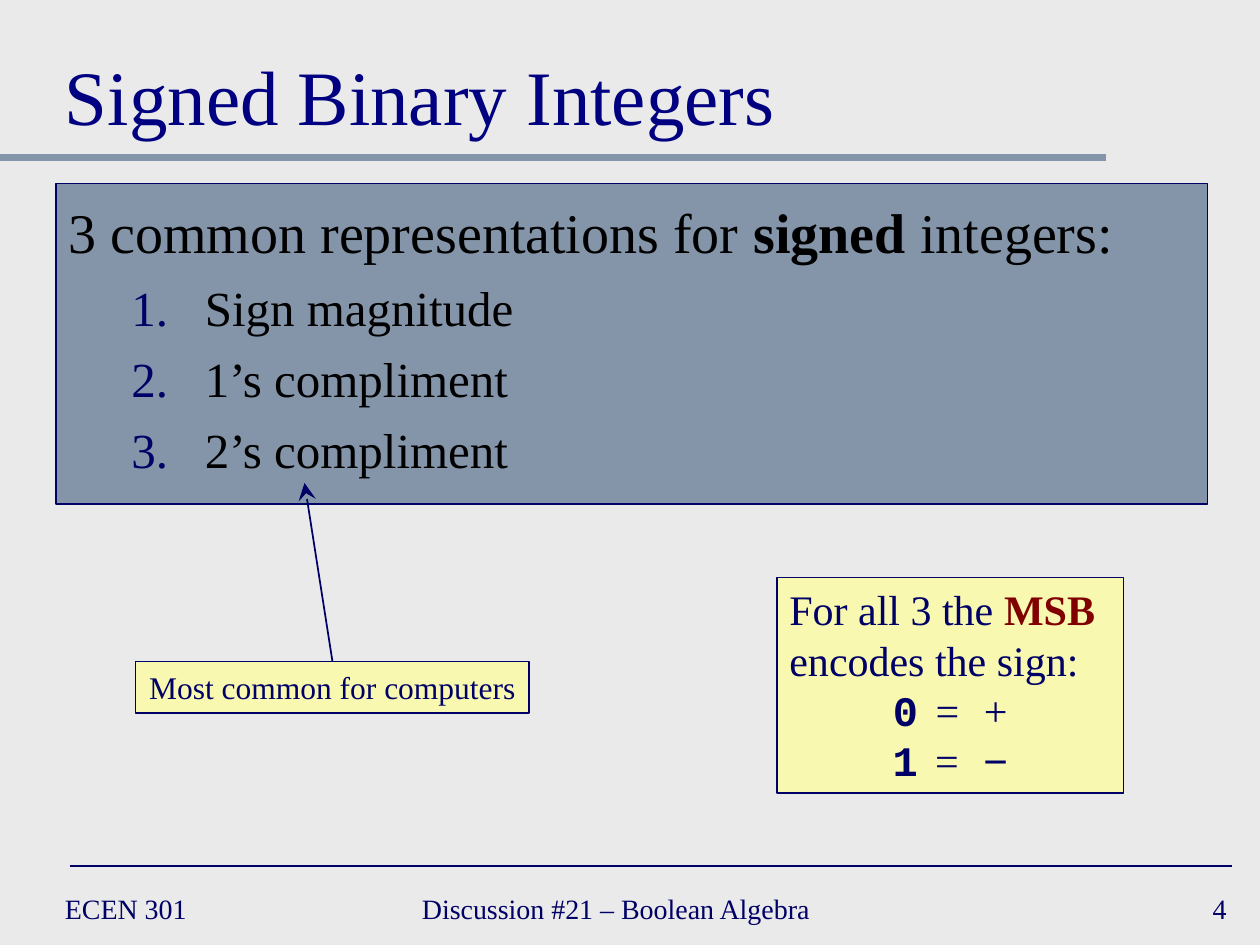
import pptx
import pptx.util
import pptx.dml.color
import pptx.enum.shapes
import pptx.enum.text
import pptx.oxml.ns
import lxml.etree

Pt = pptx.util.Pt
ALIGN = pptx.enum.text.PP_ALIGN
ANCHOR = pptx.enum.text.MSO_ANCHOR

THEME = {
    "background": "EAEAEA", "slate": "8495A9", "navy": "000066", "title": "000080",
    "black": "000000", "note": "FFFF99", "accent": "800000",
    "serif": "Times New Roman", "mono": "Courier New", "sans": "Arial",
    "title_size": 44, "lead_size": 32, "item_size": 28, "sign_size": 24,
    "callout_size": 18, "footer_size": 16,
}

# A span is its text, or its text with the styles that differ from the box.
TITLE = "Signed Binary Integers"
LEAD = ["3 common representations for ", ("signed", {"bold": True}), " integers:"]
METHODS = ["Sign magnitude", "1’s compliment", "2’s compliment"]
CALLOUT = "Most common for computers"
SIGN_RULE = ["For all 3 the ", ("MSB", {"bold": True, "color": "accent"}), " encodes the sign:"]
SIGN_CODES = [("0", "+", "serif"), ("1", "−", "sans")]
FOOTERS = [  # text, left, width, alignment
    ("ECEN 301", 30, 156, ALIGN.LEFT),
    ("Discussion #21 – Boolean Algebra", 234, 276, ALIGN.LEFT),
    ("4", 558, 150, ALIGN.RIGHT),
]
RULES = [  # left, right, height on the page, colour, weight
    (0, 632, 90, "slate", 4),
    (40, 704, 495, "navy", 1),
]


def color(name):
    return pptx.dml.color.RGBColor.from_string(THEME[name])


def add_child(parent, tag, **attributes):
    child = lxml.etree.SubElement(parent, pptx.oxml.ns.qn(tag))
    for key, value in attributes.items():
        child.set(key, value)
    return child


def add_spans(para, spans, size, base="navy"):
    for span in spans:
        text, style = (span, {}) if isinstance(span, str) else span
        run = para.add_run()
        run.text = text
        run.font.name = THEME[style.get("font", "serif")]
        run.font.size = Pt(THEME[size])
        run.font.bold = style.get("bold", False)
        run.font.color.rgb = color(style.get("color", base))
        if "tracking" in style:
            run.font._element.set("spc", str(style["tracking"] * 100))


def set_frame(shape, anchor, wrap=True):
    frame = shape.text_frame
    frame.word_wrap = wrap
    frame.vertical_anchor = anchor
    frame.paragraphs[0].alignment = ALIGN.LEFT
    return frame


def add_label(page, text, place, size, base, anchor, alignment=ALIGN.LEFT):
    frame = set_frame(page.shapes.add_textbox(*map(Pt, place)), anchor)
    frame.paragraphs[0].alignment = alignment
    add_spans(frame.paragraphs[0], [text], size, base)


def add_panel(page, place, fill, weight, opacity=100):
    panel = page.shapes.add_shape(pptx.enum.shapes.MSO_SHAPE.RECTANGLE, *map(Pt, place))
    panel.shadow.inherit = False
    panel.fill.solid()
    panel.fill.fore_color.rgb = color(fill)
    if opacity < 100:
        tint = panel._element.spPr.find(".//" + pptx.oxml.ns.qn("a:srgbClr"))
        add_child(tint, "a:alpha", val=str(opacity * 1000))
    panel.line.color.rgb = color("navy")
    panel.line.width = Pt(weight)
    return panel


def add_line(page, start, end, tone, weight):
    line = page.shapes.add_connector(
        pptx.enum.shapes.MSO_CONNECTOR.STRAIGHT, *map(Pt, start + end))
    line.line.color.rgb = color(tone)
    line.line.width = Pt(weight)
    add_child(line._element.spPr, "a:effectLst")
    return line


def number_paragraph(para):
    properties = para._element.get_or_add_pPr()
    properties.set("marL", str(Pt(78)))
    properties.set("indent", str(-Pt(42)))
    bullet_color = add_child(properties, "a:buClr")
    add_child(bullet_color, "a:srgbClr", val=THEME["navy"])
    add_child(properties, "a:buFont", typeface=THEME["serif"])
    add_child(properties, "a:buAutoNum", type="arabicPeriod")


def add_methods(page):
    panel = add_panel(page, (32, 105, 658, 183), "slate", 0.75)
    frame = set_frame(panel, ANCHOR.TOP)
    frame.margin_top = Pt(8)
    add_spans(frame.paragraphs[0], LEAD, "lead_size", "black")
    for method in METHODS:
        para = frame.add_paragraph()
        para.alignment = ALIGN.LEFT
        para.level = 1
        para.space_before = Pt(7)
        number_paragraph(para)
        add_spans(para, [method], "item_size", "black")


def add_callout(page):
    panel = add_panel(page, (77.5, 378, 225, 29.5), "note", 1, opacity=70)
    frame = set_frame(panel, ANCHOR.TOP, wrap=False)
    frame.paragraphs[0].alignment = ALIGN.CENTER
    add_spans(frame.paragraphs[0], [CALLOUT], "callout_size")
    arrow = add_line(page, (190, 378), (174, 276), "navy", 1)
    arrow.begin_connect(panel, 0)
    add_child(arrow.line._get_or_add_ln(), "a:tailEnd", type="stealth", w="lg", len="lg")


def add_sign_note(page):
    panel = add_panel(page, (444, 330, 198, 123), "note", 1, opacity=70)
    frame = set_frame(panel, ANCHOR.TOP)
    add_spans(frame.paragraphs[0], SIGN_RULE, "sign_size")
    for bit, sign, sign_font in SIGN_CODES:
        para = frame.add_paragraph()
        para.alignment = ALIGN.CENTER
        add_spans(para, [
            (bit, {"font": "mono", "bold": True}),
            (" = ", {"tracking": 4}),
            (sign, {"font": sign_font}),
        ], "sign_size")


def main():
    deck = pptx.Presentation()
    deck.slide_width, deck.slide_height = Pt(720), Pt(540)
    page = deck.slides.add_slide(deck.slide_layouts[6])
    page.background.fill.solid()
    page.background.fill.fore_color.rgb = color("background")

    for left, right, height, tone, weight in RULES:
        add_line(page, (left, height), (right, height), tone, weight)
    for text, left, width, alignment in FOOTERS:
        add_label(page, text, (left, 504, width, 30), "footer_size", "navy",
                  ANCHOR.MIDDLE, alignment)
    add_label(page, TITLE, (30, 12, 660, 72), "title_size", "title", ANCHOR.BOTTOM)
    add_methods(page)
    add_callout(page)
    add_sign_note(page)
    deck.save("out.pptx")


if __name__ == "__main__":
    main()
